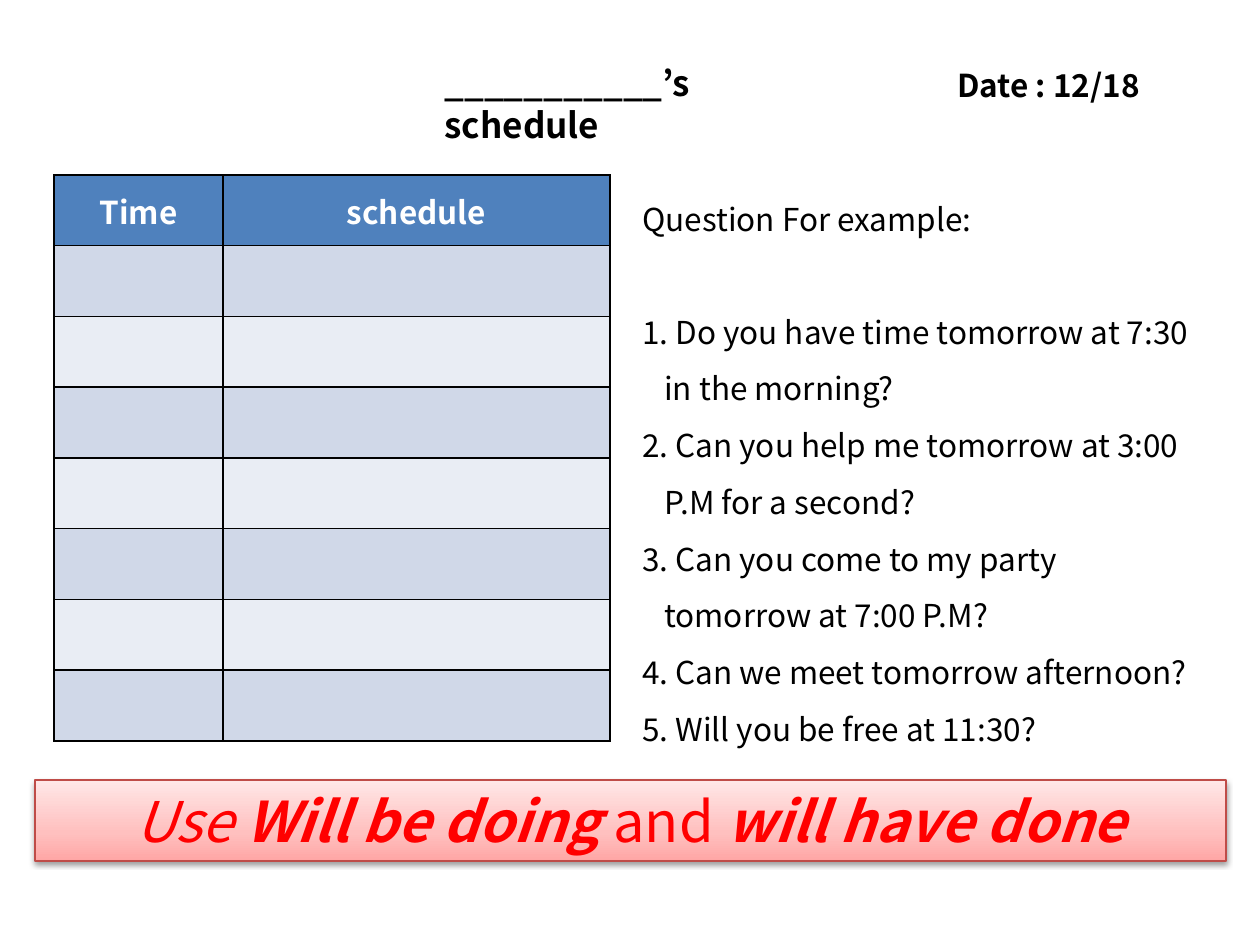
"""Build a class schedule slide with sample questions."""
from copy import deepcopy

from pptx import Presentation
from pptx.dml.color import RGBColor
from pptx.enum.shapes import MSO_SHAPE
from pptx.enum.text import MSO_ANCHOR, PP_ALIGN
from pptx.oxml import parse_xml
from pptx.util import Pt

UNIT = 914400 / 126
FONT = "Noto Sans CJK KR"
NS = 'xmlns:a="http://schemas.openxmlformats.org/drawingml/2006/main"'
HUES = {
    "black": "000000", "white": "FFFFFF", "red": "FF0000",
    "head": "4F81BD", "dark": "D0D8E8", "light": "E9EDF4",
    "edge": "BF4C48", "rose": "FFA6A5", "pink": "FFC0BF", "blush": "FFE7E7",
}


def px(*nums):
    return [round(num * UNIT) for num in nums]


def style(para, size, hue, bold=None):
    font = para.font
    font.name, font.size, font.bold = FONT, Pt(size), bold
    font.color.rgb = RGBColor.from_string(HUES[hue])


deck = Presentation()
deck.slide_width, deck.slide_height = px(1260, 945)
slide = deck.slides.add_slide(deck.slide_layouts[6])
shapes = slide.shapes

for text, box, size in [
    ("___________’s schedule", (432, 55, 377, 55), 20),
    ("Date : 12/18", (945, 60, 258, 50), 18),
]:
    frame = shapes.add_textbox(*px(*box)).text_frame
    frame.word_wrap = True
    frame.text = text
    style(frame.paragraphs[0], size, "black", True)

table = shapes.add_table(8, 2, *px(54, 175, 556, 566)).table
for col, width in zip(table.columns, px(169, 387)):
    col.width = width
for cell, text in zip(table.rows[0].cells, ("Time", "schedule")):
    cell.text = text
    cell.vertical_anchor = MSO_ANCHOR.MIDDLE
    para = cell.text_frame.paragraphs[0]
    para.alignment = PP_ALIGN.CENTER
    style(para, 18, "white", True)
for num, row in enumerate(table.rows):
    hue = "head" if num == 0 else "dark" if num % 2 else "light"
    for cell in row.cells:
        cell.fill.solid()
        cell.fill.fore_color.rgb = RGBColor.from_string(HUES[hue])
        props = cell._tc.get_or_add_tcPr()
        for spot, side in enumerate("LRTB"):
            props.insert(spot, parse_xml(
                f'<a:ln{side} {NS} w="12700"><a:solidFill>'
                f'<a:srgbClr val="{HUES["black"]}"/></a:solidFill></a:ln{side}>'))

asks = [
    "Question For example:",
    "1. Do you have time tomorrow at 7:30\vin the morning?",
    "2. Can you help me tomorrow at 3:00\vP.M for a second?",
    "3. Can you come to my party\vtomorrow at 7:00 P.M?",
    "4. Can we meet tomorrow afternoon?",
    "5. Will you be free at 11:30?",
]
frame = shapes.add_textbox(*px(630, 175, 595, 643)).text_frame
frame.word_wrap = True
hang, = px(22)
for num, text in enumerate(asks):
    para = frame.add_paragraph() if num else frame.paragraphs[0]
    para.text = text
    para.line_spacing = 1.5
    style(para, 18, "black")
    if num:
        props = para._p.get_or_add_pPr()
        props.set("marL", str(hang))
        props.set("indent", str(-hang))
    else:
        para.space_after = Pt(32)

bar = shapes.add_shape(MSO_SHAPE.RECTANGLE, *px(35, 780, 1191, 81))
bar.fill.gradient()
bar.fill.gradient_angle = 90
first = bar._element.spPr.find(".//{*}gs")
first.addnext(deepcopy(first))
for stop, place, hue in zip(
    bar.fill.gradient_stops, (0, 0.35, 1), ("rose", "pink", "blush")
):
    stop.position = place
    stop.color.rgb = RGBColor.from_string(HUES[hue])
bar.line.color.rgb = RGBColor.from_string(HUES["edge"])
bar.line.width = Pt(0.75)
bar.shadow.inherit = False
bar._element.spPr.find("{*}effectLst").append(parse_xml(
    f'<a:outerShdw {NS} blurRad="40000" dist="20000" dir="5400000" rotWithShape="0">'
    f'<a:srgbClr val="{HUES["black"]}"><a:alpha val="38000"/></a:srgbClr></a:outerShdw>'))
para = bar.text_frame.paragraphs[0]
para.alignment = PP_ALIGN.CENTER
style(para, 32, "red")
for text, bold, slant in [
    ("Use ", False, True),
    ("Will be doing ", True, True),
    ("and ", False, False),
    ("will have done", True, True),
]:
    run = para.add_run()
    run.text = text
    run.font.bold, run.font.italic = bold, slant

deck.save("out.pptx")
